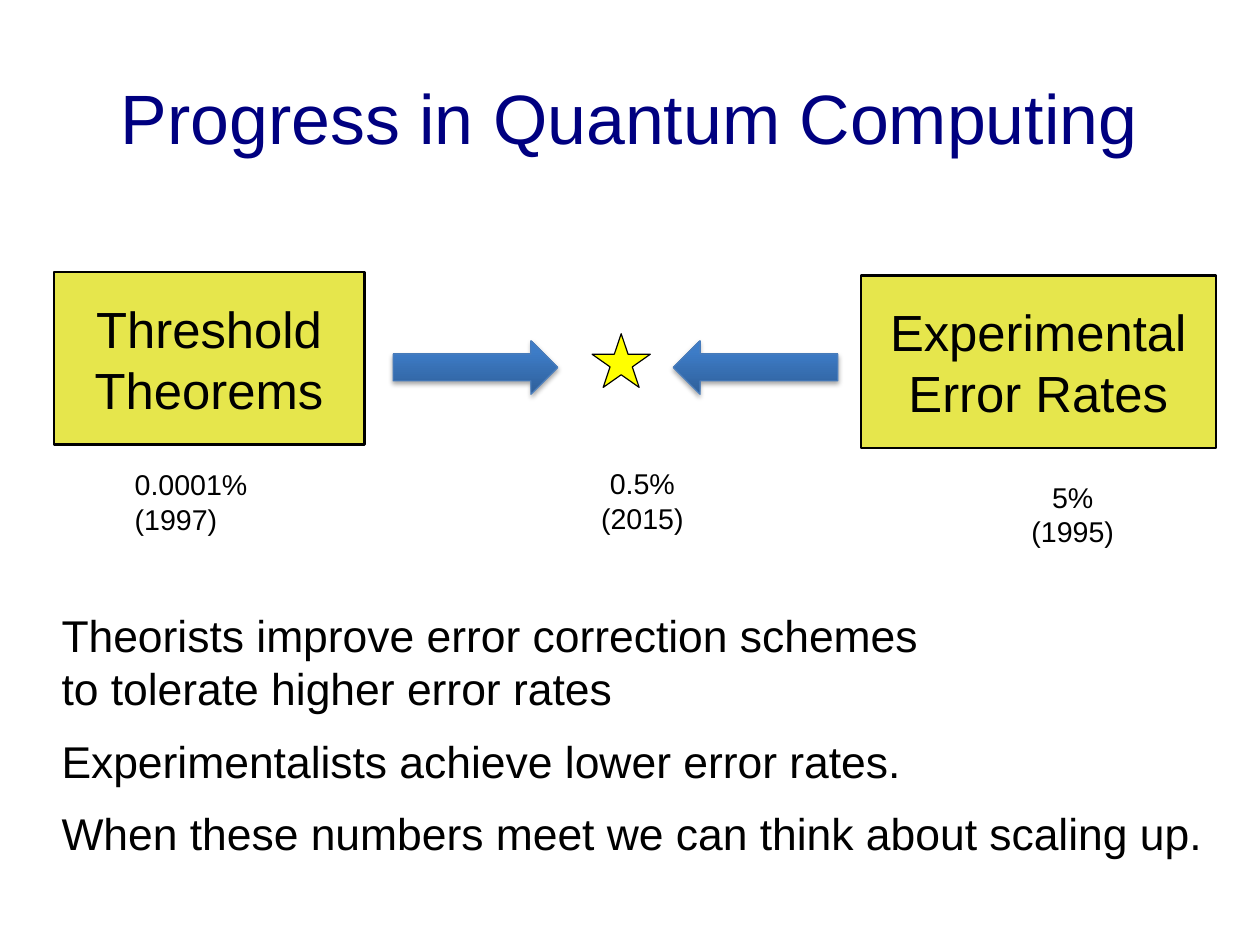
import copy
from dataclasses import dataclass

import lxml.etree
import pptx
import pptx.dml.color
import pptx.enum.shapes
import pptx.enum.text
import pptx.oxml
import pptx.oxml.ns
import pptx.util

Inches = pptx.util.Inches
Pt = pptx.util.Pt
RGBColor = pptx.dml.color.RGBColor
Shape = pptx.enum.shapes.MSO_SHAPE
Align = pptx.enum.text.PP_ALIGN
Anchor = pptx.enum.text.MSO_ANCHOR

CM_PER_INCH = 2.54
NAVY = RGBColor(0x00, 0x00, 0x80)
BLACK = RGBColor(0x00, 0x00, 0x00)
MUSTARD = RGBColor(0xE6, 0xE6, 0x4C)
YELLOW = RGBColor(0xFF, 0xFF, 0x00)
ARROW_EDGE = RGBColor(0x4B, 0x7E, 0xBC)
ARROW_STOPS = (
    (0.0, RGBColor(0x2F, 0x5F, 0x99)),
    (0.8, RGBColor(0x3D, 0x7C, 0xC7)),
    (1.0, RGBColor(0x3A, 0x7C, 0xCB)),
)
ARROW_SHADOW = (
    f'<a:outerShdw {pptx.oxml.ns.nsdecls("a")} blurRad="40000" dist="23000" '
    'dir="5400000" rotWithShape="0"><a:srgbClr val="000000">'
    '<a:alpha val="35000"/></a:srgbClr></a:outerShdw>'
)


@dataclass(frozen=True)
class Box:
    left: float
    top: float
    width: float
    height: float

    def lengths(self) -> tuple[int, int, int, int]:
        return (Inches(self.left), Inches(self.top),
                Inches(self.width), Inches(self.height))


@dataclass(frozen=True)
class Label:
    text: str
    box: Box
    align: Align = Align.CENTER


EFFORTS = (
    Label("Threshold\nTheorems", Box(0.47, 2.38, 2.72, 1.51)),
    Label("Experimental\nError Rates", Box(7.53, 2.41, 3.11, 1.51)),
)
ERROR_RATES = (
    Label("0.0001%\n(1997)", Box(1.08, 4.04, 1.46, 0.66), Align.LEFT),
    Label("0.5%\n(2015)", Box(5.01, 4.03, 1.22, 0.66)),
    Label("5%\n(1995)", Box(8.78, 4.15, 1.21, 0.66)),
)
SUMMARY = Label(
    "Theorists improve error correction schemes\n"
    "to tolerate higher error rates\n"
    "Experimentalists achieve lower error rates.\n"
    "When these numbers meet we can think about scaling up.",
    Box(0.44, 5.27, 10.2, 2.7), Align.LEFT,
)
ARROWS = ((Shape.RIGHT_ARROW, 3.44), (Shape.LEFT_ARROW, 5.89))


def write(frame, label: Label, size: int, color: RGBColor,
          inset_x: float = 0.1, inset_y: float = 0.05) -> None:
    frame.text = label.text
    frame.margin_left = frame.margin_right = Inches(inset_x)
    frame.margin_top = frame.margin_bottom = Inches(inset_y)
    for paragraph in frame.paragraphs:
        paragraph.alignment = label.align
        for run in paragraph.runs:
            run.font.name = "Arial"
            run.font.size = Pt(size)
            run.font.color.rgb = color


def add_title(slide, label: Label) -> None:
    title = slide.shapes.title
    title.left, title.top, title.width, title.height = label.box.lengths()
    write(title.text_frame, label, 44, NAVY, 0, 0)
    title.text_frame.vertical_anchor = Anchor.MIDDLE


def add_filled(slide, kind: Shape, box: Box, color: RGBColor, line_width: float):
    filled = slide.shapes.add_shape(kind, *box.lengths())
    filled.shadow.inherit = False
    filled.fill.solid()
    filled.fill.fore_color.rgb = color
    filled.line.color.rgb = BLACK
    filled.line.width = Pt(line_width)
    return filled


def add_effort(slide, label: Label) -> None:
    frame = add_filled(slide, Shape.RECTANGLE, label.box, MUSTARD, 1.45).text_frame
    write(frame, label, 32, BLACK, 0.11, 0.06)
    frame.word_wrap = False
    frame.vertical_anchor = Anchor.MIDDLE


def add_note(slide, label: Label, size: int):
    frame = slide.shapes.add_textbox(*label.box.lengths()).text_frame
    frame.word_wrap = True
    write(frame, label, size, BLACK)
    return frame


def add_arrow(slide, kind: Shape, left: float) -> None:
    arrow = slide.shapes.add_shape(kind, *Box(left, 2.98, 1.44, 0.47).lengths())
    arrow.line.color.rgb = ARROW_EDGE
    arrow.line.width = Pt(0.75)
    arrow.fill.gradient()
    arrow.fill.gradient_angle = 90
    properties = arrow.element.spPr
    stop_list = properties.find(".//" + pptx.oxml.ns.qn("a:gsLst"))
    stop_list.append(copy.deepcopy(stop_list[-1]))
    for stop, (position, color) in zip(arrow.fill.gradient_stops, ARROW_STOPS):
        stop.position = position
        stop.color.rgb = color
    effects = lxml.etree.SubElement(properties, pptx.oxml.ns.qn("a:effectLst"))
    effects.append(pptx.oxml.parse_xml(ARROW_SHADOW))


def main() -> None:
    deck = pptx.Presentation()
    deck.slide_width = Inches(28 / CM_PER_INCH)
    deck.slide_height = Inches(21 / CM_PER_INCH)
    slide = deck.slides.add_slide(deck.slide_layouts.get_by_name("Title Only"))
    add_title(slide, Label("Progress in Quantum Computing", Box(0.55, 0.33, 9.92, 1.38)))
    for effort in EFFORTS:
        add_effort(slide, effort)
    add_filled(slide, Shape.STAR_5_POINT, Box(5.18, 2.92, 0.51, 0.47), YELLOW, 0.75)
    for rate in ERROR_RATES:
        add_note(slide, rate, 18)
    summary = add_note(slide, SUMMARY, 28)
    for statement in summary.paragraphs[2:]:
        statement.space_before = Pt(12)
    for kind, left in ARROWS:
        add_arrow(slide, kind, left)
    deck.save("out.pptx")


if __name__ == "__main__":
    main()
